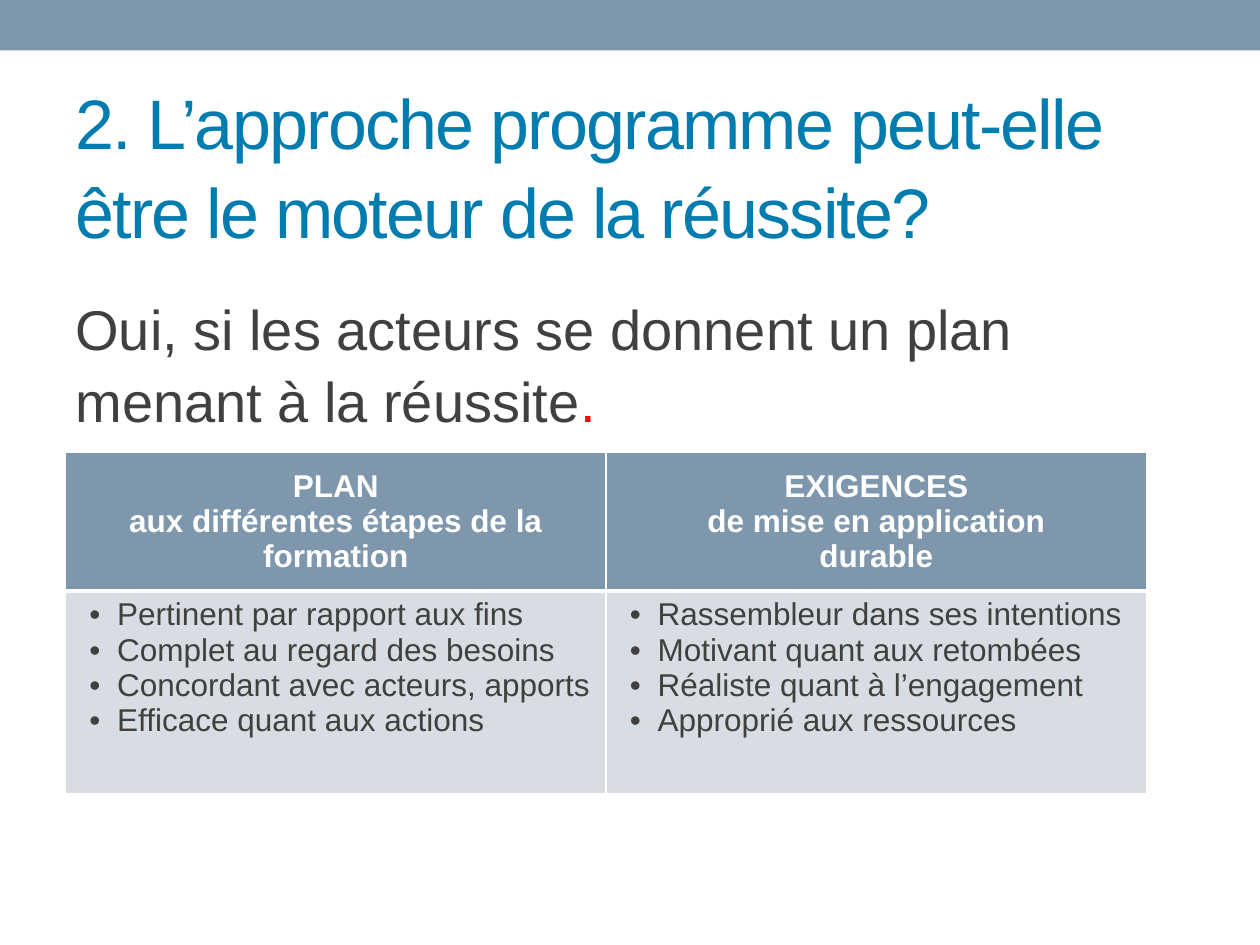
"""Build a slide on the programme approach, with a table of plan qualities and requirements."""
from dataclasses import dataclass

from lxml import etree
from pptx import Presentation
from pptx import util as u
from pptx.dml.color import RGBColor
from pptx.enum import shapes, text
from pptx.oxml import ns


@dataclass(frozen=True)
class Theme:
    font: str = "Arial"
    slate: str = "7E97AD"
    pale: str = "D8DDE3"
    blue: str = "007CAF"
    ink: str = "404040"
    red: str = "FF0000"
    white: str = "FFFFFF"
    title_size: int = 40
    body_size: int = 32
    table_size: int = 18


theme = Theme()


def style(run, size, color, bold=False):
    run.font.name = theme.font
    run.font.size = u.Pt(size)
    run.font.bold = bold
    run.font.color.rgb = RGBColor.from_string(color)


def add_border(cell, side, width):
    properties = cell._tc.get_or_add_tcPr()
    line = etree.SubElement(properties, ns.qn(f"a:ln{side}"), w=str(u.Pt(width)))
    fill = etree.SubElement(line, ns.qn("a:solidFill"))
    etree.SubElement(fill, ns.qn("a:srgbClr"), val=theme.white)


deck = Presentation()
deck.slide_width, deck.slide_height = u.Inches(10), u.Inches(7.5)
slide = deck.slides.add_slide(deck.slide_layouts[6])

banner = slide.shapes.add_shape(shapes.MSO_SHAPE.RECTANGLE, 0, 0, deck.slide_width, u.Inches(0.4))
banner.shadow.inherit = False
banner.fill.solid()
banner.fill.fore_color.rgb = RGBColor.from_string(theme.slate)
banner.line.fill.background()

title = slide.shapes.add_textbox(u.Inches(0.5), u.Inches(0.58), u.Inches(9), u.Inches(1.43)).text_frame
title.word_wrap = True
title.vertical_anchor = text.MSO_ANCHOR.MIDDLE
title.text = "2. L’approche programme peut-elle\vêtre le moteur de la réussite?"
heading = title.paragraphs[0]
heading.line_spacing = 1.07
for run in heading.runs:
    style(run, theme.title_size, theme.blue)
    run.font._element.set("spc", "-100")

answer = slide.shapes.add_textbox(u.Inches(0.5), u.Inches(2.25), u.Inches(9), u.Inches(1.25)).text_frame
answer.word_wrap = True
sentence = answer.paragraphs[0]
sentence.line_spacing = 1.07
for wording, color in (
    ("Oui, si les acteurs se donnent un plan menant à la réussite", theme.ink),
    (".", theme.red),
):
    run = sentence.add_run()
    run.text = wording
    style(run, theme.body_size, color)

columns = (
    (
        "PLAN\naux différentes étapes de la formation",
        "Pertinent par rapport aux fins\nComplet au regard des besoins\n"
        "Concordant avec acteurs, apports\nEfficace quant aux actions",
    ),
    (
        "EXIGENCES\nde mise en application\vdurable",
        "Rassembleur dans ses intentions\nMotivant quant aux retombées\n"
        "Réaliste quant à l’engagement\nApproprié aux ressources",
    ),
)
criteria = slide.shapes.add_table(
    2, 2, u.Inches(0.52), u.Inches(3.59), u.Inches(8.58), u.Inches(2.71)
).table
for row, height in zip(criteria.rows, (1.1, 1.61)):
    row.height = u.Inches(height)

for column, entries in enumerate(columns):
    for row, entry in enumerate(entries):
        is_header = row == 0
        cell = criteria.cell(row, column)
        for side, width in zip("LRTB", (1, 1, 1, 3) if is_header else (1, 1, 3, 1)):
            add_border(cell, side, width)
        cell.fill.solid()
        cell.fill.fore_color.rgb = RGBColor.from_string(theme.slate if is_header else theme.pale)
        cell.vertical_anchor = text.MSO_ANCHOR.MIDDLE if is_header else text.MSO_ANCHOR.TOP
        cell.text_frame.text = entry
        for paragraph in cell.text_frame.paragraphs:
            for run in paragraph.runs:
                style(run, theme.table_size, theme.white if is_header else theme.ink, is_header)
            if is_header:
                paragraph.alignment = text.PP_ALIGN.CENTER
            else:
                layout = paragraph._p.get_or_add_pPr()
                layout.set("marL", str(u.Inches(0.31)))
                layout.set("indent", str(u.Inches(-0.22)))
                etree.SubElement(layout, ns.qn("a:buFont"), typeface=theme.font)
                etree.SubElement(layout, ns.qn("a:buChar"), char="•")

deck.save("out.pptx")
